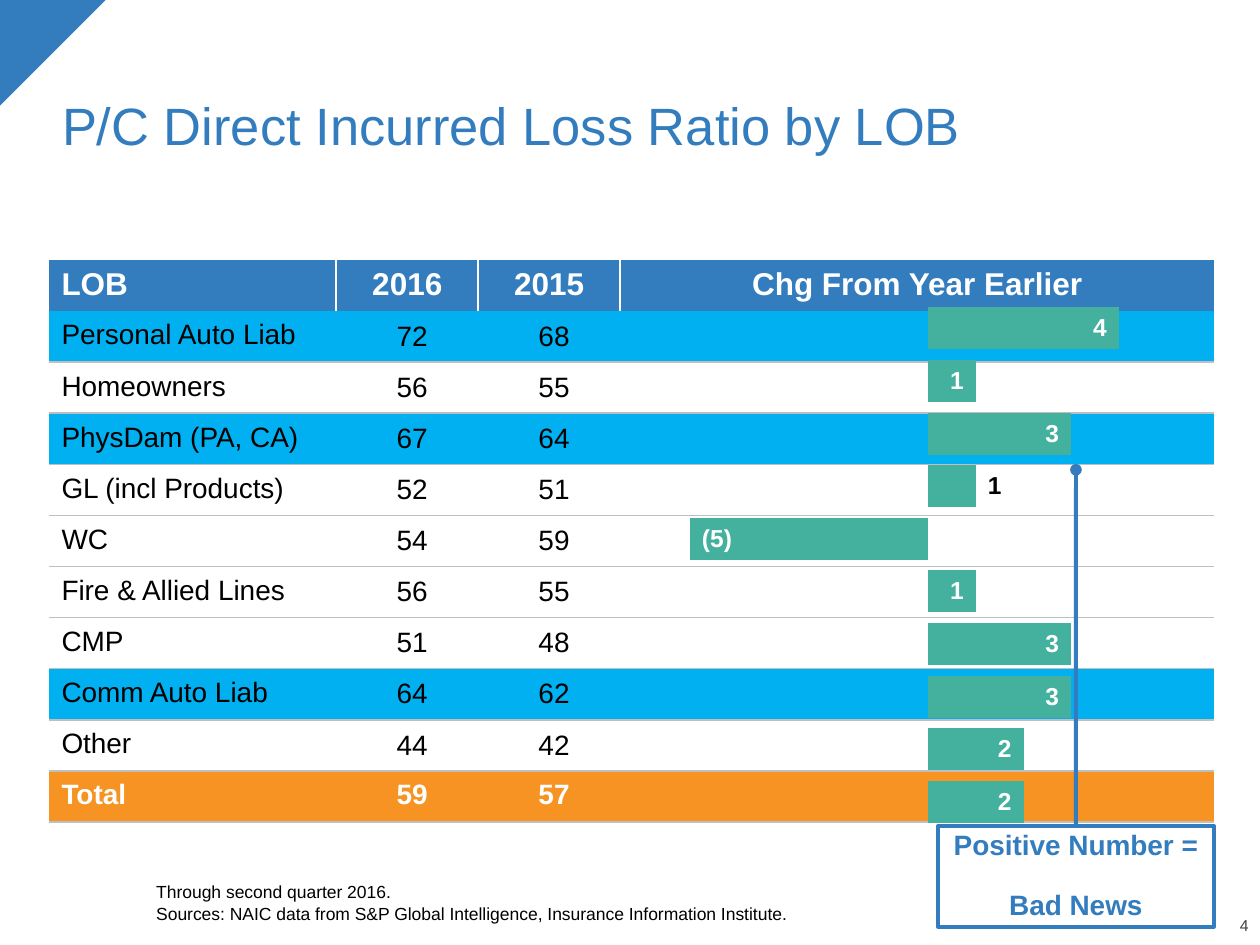
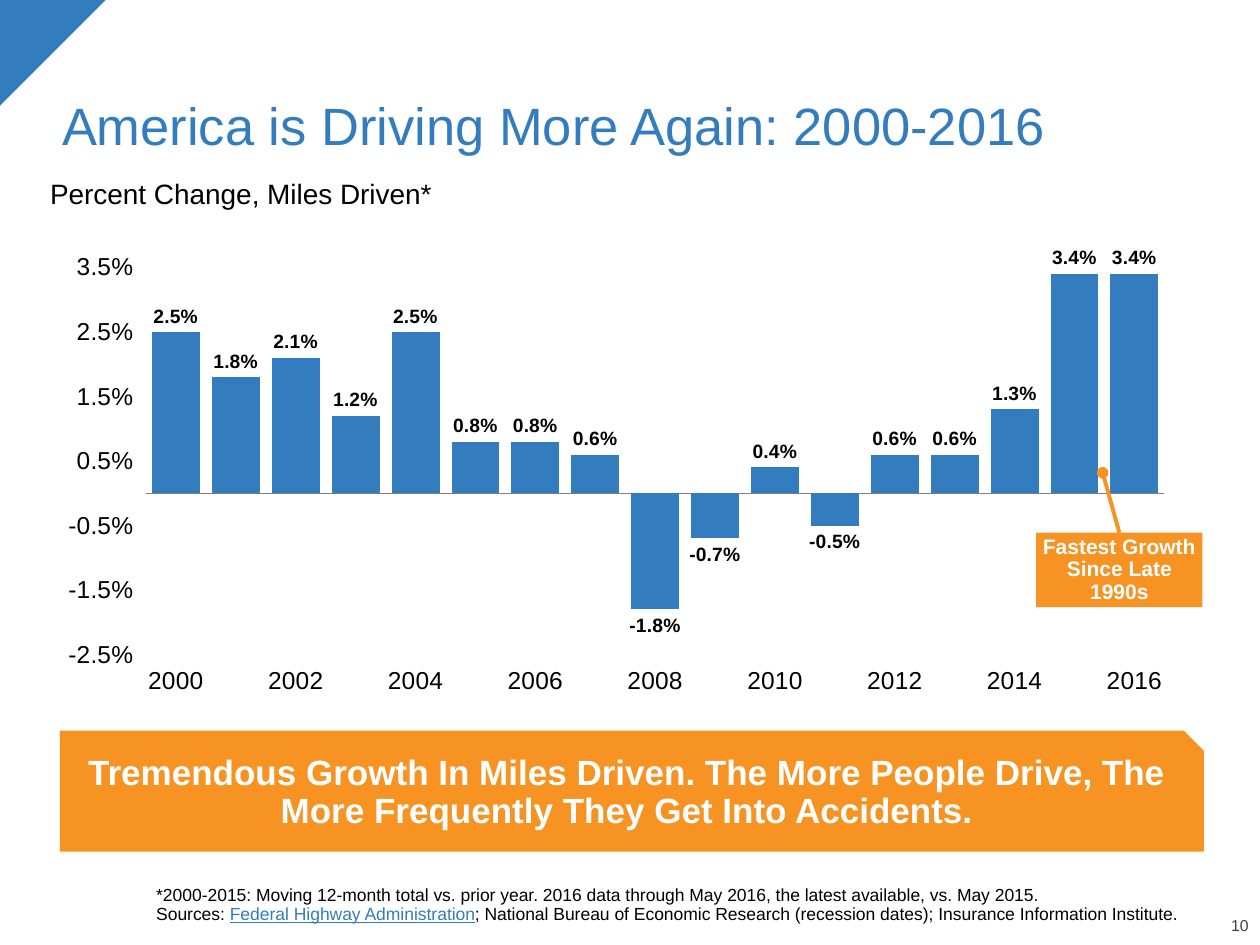
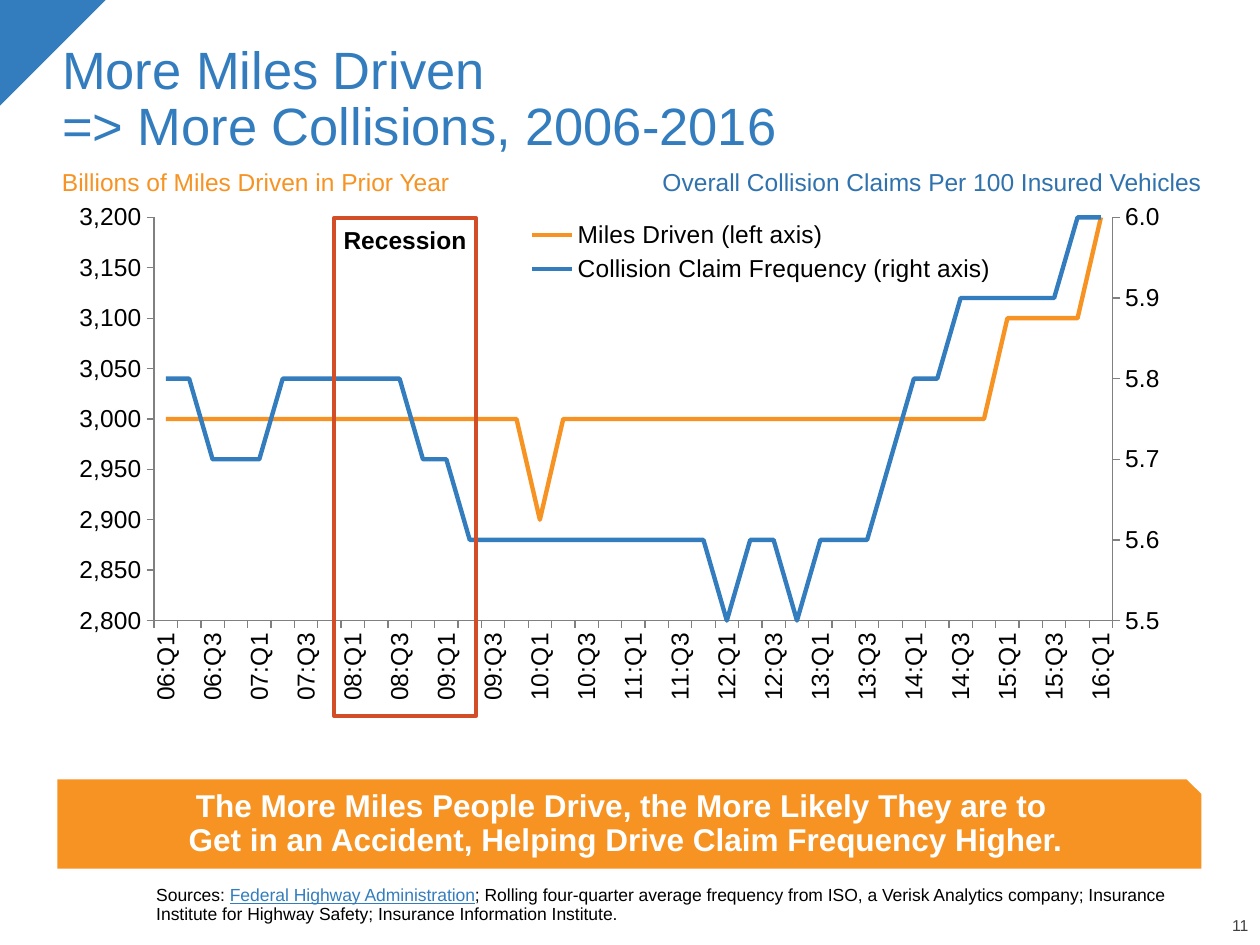
from copy import deepcopy

from pptx import Presentation
from pptx.chart.data import CategoryChartData
from pptx.dml.color import RGBColor
from pptx.enum.chart import (XL_CHART_TYPE, XL_LABEL_POSITION, XL_LEGEND_POSITION,
                             XL_TICK_LABEL_POSITION, XL_TICK_MARK)
from pptx.enum.shapes import MSO_CONNECTOR, MSO_SHAPE
from pptx.enum.text import MSO_ANCHOR, MSO_AUTO_SIZE, PP_ALIGN
from pptx.oxml import parse_xml
from pptx.oxml.ns import nsdecls, qn
from pptx.util import Cm, Pt

FONT = "Arial"
BLUE = RGBColor(0x33, 0x7D, 0xBE)
DEEP_BLUE = RGBColor(0x2F, 0x72, 0xAD)
SKY = RGBColor(0x00, 0xB0, 0xF0)
ORANGE = RGBColor(0xF6, 0x93, 0x22)
GREEN = RGBColor(0x43, 0xB1, 0x9E)
RED = RGBColor(0xD3, 0x4D, 0x27)
BLACK = RGBColor(0x00, 0x00, 0x00)
WHITE = RGBColor(0xFF, 0xFF, 0xFF)
DARK_GRAY = RGBColor(0x40, 0x40, 0x40)
AXIS_GRAY = RGBColor(0x80, 0x80, 0x80)
RULE_GRAY = RGBColor(0xBF, 0xBF, 0xBF)

LEFT, CENTER, RIGHT = PP_ALIGN.LEFT, PP_ALIGN.CENTER, PP_ALIGN.RIGHT
TOP, MIDDLE, BOTTOM = MSO_ANCHOR.TOP, MSO_ANCHOR.MIDDLE, MSO_ANCHOR.BOTTOM
RECTANGLE, SNIPPED = MSO_SHAPE.RECTANGLE, MSO_SHAPE.SNIP_1_RECTANGLE
BAR, COLUMN, LINE = (XL_CHART_TYPE.BAR_CLUSTERED, XL_CHART_TYPE.COLUMN_CLUSTERED,
                     XL_CHART_TYPE.LINE)
INSIDE_END, OUTSIDE_END = XL_LABEL_POSITION.INSIDE_END, XL_LABEL_POSITION.OUTSIDE_END
LOW = XL_TICK_LABEL_POSITION.LOW
NO_TICK, TICK_OUT = XL_TICK_MARK.NONE, XL_TICK_MARK.OUTSIDE

NO_INSETS = (0, 0, 0, 0)
PLAIN_TABLE_STYLE = "{2D5ABB26-0587-4C30-8999-92F81FD0307C}"
ACCOUNTING = r'_(* #,##0_);_(* \(#,##0\);_(* "-"??_);_('
LAYOUT = ("<c:layout %s><c:manualLayout>{target}"
          '<c:xMode val="edge"/><c:yMode val="edge"/><c:x val="{x}"/><c:y val="{y}"/>'
          '<c:w val="{w}"/><c:h val="{h}"/></c:manualLayout></c:layout>' % nsdecls("c"))


def write(target, *lines, size, color=BLACK, bold=False, align=LEFT, spacing=0.9,
          before=0, anchor=TOP, insets=(0.25, 0.13, 0.25, 0.13), wrap=True):
    """Fill a shape or cell; a line is text or a list of text and (link text,) spans."""
    frame = target.text_frame
    holder = target
    if not hasattr(target, "margin_left"):
        holder = frame
        frame.word_wrap = wrap
        frame.auto_size = MSO_AUTO_SIZE.NONE
    holder.vertical_anchor = anchor
    (holder.margin_left, holder.margin_top,
     holder.margin_right, holder.margin_bottom) = map(Cm, insets)
    for index, line in enumerate(lines):
        para = frame.add_paragraph() if index else frame.paragraphs[0]
        para.alignment = align
        para.line_spacing = spacing
        para.space_before = Pt(before if index else 0)
        for part in [line] if isinstance(line, str) else line:
            linked = isinstance(part, tuple)
            for row, words in enumerate((part[0] if linked else part).split("\n")):
                if row:
                    para.add_line_break()
                span = para.add_run()
                span.text = words
                span.font.name = FONT
                span.font.size = Pt(size)
                span.font.bold = bold
                span.font.underline = linked
                span.font.color.rgb = BLUE if linked else color


def draw_chart(page, kind, place, plot, categories, series, size):
    data = CategoryChartData()
    data.categories = categories
    for name, values in series:
        data.add_series(name, values)
    chart = page.shapes.add_chart(kind, *map(Cm, place), data).chart
    chart.has_title = False
    chart.has_legend = False
    chart.font.name = FONT
    chart.font.size = Pt(size)
    chart.font.color.rgb = BLACK
    chart.value_axis.has_major_gridlines = False
    for axis in (chart.category_axis, chart.value_axis):
        axis.format.line.color.rgb = AXIS_GRAY
        axis.format.line.width = Pt(0.75)
        axis.major_tick_mark = TICK_OUT
    area = chart._chartSpace.chart.plotArea
    for old_layout in area.findall(qn("c:layout")):
        area.remove(old_layout)
    x, y, w, h = plot
    area.insert(0, parse_xml(LAYOUT.format(
        target='<c:layoutTarget val="inner"/>', x=x, y=y, w=w, h=h)))
    return chart


deck = Presentation()
deck.slide_width, deck.slide_height = Cm(25.4), Cm(19.05)

# Shared frame: corner, title, source line and page number
AGENCY = ("Federal Highway Administration",)
pages = []
for title, number, sources in (
    ("P/C Direct Incurred Loss Ratio by LOB", "4",
     ["Through second quarter 2016.",
      "Sources: NAIC data from S&P Global Intelligence, Insurance Information Institute."]),
    ("America is Driving More Again: 2000-2016", "10",
     [["*2000-2015: Moving 12-month total vs. prior year. 2016 data through May 2016, "
       "the latest available, vs. May 2015.\nSources: ", AGENCY,
       "; National Bureau of Economic Research (recession dates); "
       "Insurance Information Institute."]]),
    ("More Miles Driven\n=> More Collisions, 2006-2016", "11",
     [["Sources: ", AGENCY,
       "; Rolling four-quarter average frequency from ISO, a Verisk Analytics company; "
       "Insurance Institute for Highway Safety; Insurance Information Institute."]]),
):
    page = deck.slides.add_slide(deck.slide_layouts[5])
    pages.append(page)
    corner = page.shapes.add_shape(MSO_SHAPE.RIGHT_TRIANGLE, 0, 0, Cm(2.13), Cm(2.13))
    corner.rotation = 90
    corner.shadow.inherit = False
    corner.fill.solid()
    corner.fill.fore_color.rgb = BLUE
    corner.line.fill.background()

    heading = page.shapes.title
    heading.left, heading.top, heading.width, heading.height = map(
        Cm, (1, 0.66, 23.5, 2.64))
    write(heading, title, size=30, color=BLUE, anchor=BOTTOM)
    footer = page.shapes.add_textbox(*map(Cm, (3.15, 17.5, 21.34, 1.14)))
    write(footer, *sources, size=10, before=2, anchor=BOTTOM, insets=NO_INSETS)
    folio = page.shapes.add_textbox(*map(Cm, (23.95, 18.52, 1.22, 0.33)))
    write(folio, number, size=9, color=DARK_GRAY, align=RIGHT, anchor=BOTTOM,
          insets=NO_INSETS)
loss_page, driving_page, collision_page = pages

# Axis captions
for page, place, caption, size, color, align in (
    (driving_page, (0.76, 3.51, 23.5, 1.09), "Percent Change, Miles Driven*",
     16, BLACK, LEFT),
    (collision_page, (1, 3.3, 9.68, 1.09), "Billions of Miles Driven in Prior Year",
     14, ORANGE, LEFT),
    (collision_page, (12.75, 3.3, 11.73, 1.09),
     "Overall Collision Claims Per 100 Insured Vehicles", 14, DEEP_BLUE, RIGHT),
):
    box = page.shapes.add_textbox(*map(Cm, place))
    write(box, caption, size=size, color=color, align=align)

# Loss ratio table
loss_rows = (
    ("LOB", "2016", "2015", "Chg From Year Earlier"),
    ("Personal Auto Liab", "72", "68", ""),
    ("Homeowners", "56", "55", ""),
    ("PhysDam (PA, CA)", "67", "64", ""),
    ("GL (incl Products)", "52", "51", ""),
    ("WC", "54", "59", ""),
    ("Fire & Allied Lines", "56", "55", ""),
    ("CMP", "51", "48", ""),
    ("Comm Auto Liab", "64", "62", ""),
    ("Other", "44", "42", ""),
    ("Total", "59", "57", ""),
)
row_fills = {0: BLUE, 1: SKY, 3: SKY, 8: SKY, 10: ORANGE}
total_row = len(loss_rows) - 1
table_frame = loss_page.shapes.add_table(
    len(loss_rows), 4, *map(Cm, (0.99, 5.24, 23.49, 11.33)))
table = table_frame.table
table.first_row = table.horz_banding = False
table._tbl.tblPr.find(qn("a:tableStyleId")).text = PLAIN_TABLE_STYLE
for column, width in zip(table.columns, (5.79, 2.86, 2.86, 11.98)):
    column.width = Cm(width)
for r, values in enumerate(loss_rows):
    table.rows[r].height = Cm(1.03)
    for c, value in enumerate(values):
        cell = table.cell(r, c)
        numeric = r > 0 and c in (1, 2)
        if r == 0:
            align = CENTER if c else LEFT
        else:
            align = RIGHT if numeric else LEFT
        write(cell, value, size=16 if r else 18, bold=r in (0, total_row), align=align,
              color=WHITE if r in (0, total_row) else BLACK, anchor=MIDDLE,
              spacing=1.0 if numeric and r < total_row else 0.9,
              insets=(0.25, 0.13, 1.02 if numeric else 0.25, 0.13))
        if r in row_fills:
            cell.fill.solid()
            cell.fill.fore_color.rgb = row_fills[r]
        else:
            cell.fill.background()
        if r:
            borders = [("lnB", RULE_GRAY, 1.5 if r == total_row else 1)]
        else:
            borders = [("lnL", WHITE, 1.5)] * (c > 0) + [("lnR", WHITE, 1.5)] * (c < 3)
        for position, (side, color, weight) in enumerate(borders):
            cell._tc.get_or_add_tcPr().insert(position, parse_xml(
                f'<a:{side} {nsdecls("a")} w="{Pt(weight)}"><a:solidFill>'
                f'<a:srgbClr val="{color}"/></a:solidFill></a:{side}>'))

# Bar charts: change in loss ratio, and miles driven
change_chart = draw_chart(
    loss_page, BAR, (12.95, 5.87, 11.53, 11.05), (0, 0.02, 1, 0.96),
    [str(n) for n in range(1, 11)],
    [("Series 1", (4, 1, 3, 1, -5, 1, 3, 3, 2, 2))], 10)
change_chart.category_axis.reverse_order = True
change_chart.category_axis.visible = False
change_chart.value_axis.visible = False
change_chart.value_axis.minimum_scale = -6
change_chart.value_axis.maximum_scale = 6

miles_chart = draw_chart(
    driving_page, COLUMN, (0.97, 4.09, 22.94, 10.87), (0.086, 0.06, 0.895, 0.778),
    ["" if year % 2 else str(year) for year in range(2000, 2017)],
    [("Series 1", (0.025, 0.018, 0.021, 0.012, 0.025, 0.008, 0.008, 0.006, -0.018,
                   -0.007, 0.004, -0.005, 0.006, 0.006, 0.013, 0.034, 0.034))], 14)
miles_chart.category_axis.tick_label_position = LOW
miles_chart.category_axis.major_tick_mark = NO_TICK
percent_axis = miles_chart.value_axis
percent_axis.tick_label_position = LOW
percent_axis.format.line.fill.background()
percent_axis.minimum_scale = -0.025
percent_axis.maximum_scale = 0.04
percent_axis.major_unit = 0.01
percent_axis.tick_labels.number_format = "0.0%"
percent_axis.tick_labels.number_format_is_linked = False

for chart, color, label_size, label_color, position, number_format in (
    (change_chart, GREEN, 14, WHITE, INSIDE_END, ACCOUNTING),
    (miles_chart, BLUE, 11, BLACK, OUTSIDE_END, "0.0%"),
):
    plot = chart.plots[0]
    plot.gap_width = 25
    plot.vary_by_categories = False
    bars = plot.series[0]
    bars.invert_if_negative = False
    bars.format.fill.solid()
    bars.format.fill.fore_color.rgb = color
    labels = bars.data_labels
    labels.show_value = True
    labels.position = position
    labels.number_format = number_format
    labels.number_format_is_linked = False
    labels.font.name = FONT
    labels.font.size = Pt(label_size)
    labels.font.bold = True
    labels.font.color.rgb = label_color

liability_label = change_chart.plots[0].series[0].points[3].data_label
liability_label.position = OUTSIDE_END
liability_label.font.name = FONT
liability_label.font.size = Pt(14)
liability_label.font.bold = True
liability_label.font.color.rgb = BLACK

# Line chart: miles on the left axis, claim frequency on the right
quarters = [f"{year:02}:Q{quarter}" for year in range(6, 17) for quarter in range(1, 5)]
miles = [3000] * 16 + [2900] + [3000] * 19 + [3100] * 4 + [3200]
frequency = (5.8, 5.8, 5.7, 5.7, 5.7, 5.8, 5.8, 5.8, 5.8, 5.8, 5.8, 5.7,
             5.7, 5.6, 5.6, 5.6, 5.6, 5.6, 5.6, 5.6, 5.6, 5.6, 5.6, 5.6,
             5.5, 5.6, 5.6, 5.5, 5.6, 5.6, 5.6, 5.7, 5.8, 5.8, 5.9, 5.9,
             5.9, 5.9, 5.9, 6, 6)
collision_chart = draw_chart(
    collision_page, LINE, (1.17, 3.86, 23.06, 11.63), (0.084, 0.045, 0.838, 0.699),
    quarters[:len(miles)],
    [("Miles Driven (left axis)", miles),
     ("Collision Claim Frequency (right axis)", frequency)], 14)
for curve, color in zip(collision_chart.plots[0].series, (ORANGE, BLUE)):
    curve.smooth = False
    curve.format.line.color.rgb = color
    curve.format.line.width = Pt(2.5)

miles_axis = collision_chart.value_axis
miles_axis.minimum_scale = 2800
miles_axis.maximum_scale = 3200
miles_axis.major_unit = 50
miles_axis.tick_labels.number_format = "#,##0"
miles_axis.tick_labels.number_format_is_linked = False
quarter_axis = collision_chart.category_axis
quarter_axis.tick_labels.font.size = Pt(14)
quarter_element = quarter_axis._element
quarter_element.txPr.find(qn("a:bodyPr")).set("rot", "-5400000")
quarter_element.find(qn("c:noMultiLvlLbl")).addprevious(
    parse_xml(f'<c:tickLblSkip {nsdecls("c")} val="2"/>'))

legend_layout = parse_xml(LAYOUT.format(target="", x=0.4, y=0.04, w=0.43, h=0.13))
collision_chart.has_legend = True
legend = collision_chart.legend
legend.position = XL_LEGEND_POSITION.BOTTOM
legend.include_in_layout = False
legend.font.name = FONT
legend.font.size = Pt(14)
for old_layout in legend._element.findall(qn("c:layout")):
    legend._element.remove(old_layout)
legend._element.find(qn("c:legendPos")).addnext(legend_layout)

left_lines = collision_chart._chartSpace.chart.plotArea.find(qn("c:lineChart"))
right_lines = deepcopy(left_lines)
left_lines.remove(left_lines.findall(qn("c:ser"))[1])
right_lines.remove(right_lines.findall(qn("c:ser"))[0])
for axis_id, value in zip(right_lines.findall(qn("c:axId")), ("5001", "5002")):
    axis_id.set("val", value)
left_lines.addnext(right_lines)
frequency_axis = deepcopy(miles_axis._element)
hidden_quarters = deepcopy(quarter_element)
for element, changes in (
    (frequency_axis, {"axId": "5002", "crossAx": "5001", "axPos": "r", "crosses": "max",
                      "min": "5.5", "max": "6", "majorUnit": "0.1"}),
    (hidden_quarters, {"axId": "5001", "crossAx": "5002", "delete": "1"}),
):
    for tag, value in changes.items():
        next(element.iter(qn(f"c:{tag}"))).set("val", value)
frequency_axis.find(qn("c:numFmt")).set("formatCode", "0.0")
miles_axis._element.addnext(frequency_axis)
frequency_axis.addnext(hidden_quarters)

# Callouts and banners; a pointer runs from the top of its box to a dot
banner = dict(color=WHITE, bold=True, align=CENTER, anchor=MIDDLE,
              insets=(0.25, 0.13, 0.25, 0.25))
for page, kind, place, fill, outline, pointer, lines, text_format in (
    (loss_page, RECTANGLE, (18.91, 16.65, 5.56, 2.03), WHITE, BLUE, (21.69, 9.47),
     ["Positive Number =", "Bad News"],
     dict(size=16, color=BLUE, bold=True, align=CENTER, anchor=MIDDLE, before=17)),
    (driving_page, RECTANGLE, (20.89, 10.74, 3.35, 1.5), ORANGE, None, (22.23, 9.53),
     ["Fastest Growth Since Late 1990s"],
     dict(banner, size=12, insets=(0.13, 0, 0.13, 0))),
    (driving_page, SNIPPED, (1.21, 14.73, 23.06, 2.44), ORANGE, None, None,
     ["Tremendous Growth In Miles Driven. The More People Drive, The More Frequently "
      "They Get Into Accidents."], dict(banner, size=20)),
    (collision_page, SNIPPED, (1.16, 15.71, 23.06, 1.8), ORANGE, None, None,
     ["The More Miles People Drive, the More Likely They are to ",
      "Get in an Accident, Helping Drive Claim Frequency Higher."],
     dict(banner, size=18)),
    (collision_page, RECTANGLE, (6.73, 4.4, 2.87, 10.03), None, RED, None,
     ["Recession"], dict(size=14, bold=True, align=CENTER, spacing=1.0, wrap=False)),
):
    box = page.shapes.add_shape(kind, *map(Cm, place))
    box.shadow.inherit = False
    if fill is None:
        box.fill.background()
    else:
        box.fill.solid()
        box.fill.fore_color.rgb = fill
    if outline is None:
        box.line.fill.background()
    else:
        box.line.color.rgb = outline
        box.line.width = Pt(2.25)
    write(box, *lines, **text_format)
    if pointer:
        line = page.shapes.add_connector(MSO_CONNECTOR.STRAIGHT, 0, 0, *map(Cm, pointer))
        line.begin_connect(box, 0)
        line.line.color.rgb = outline or fill
        line.line.width = Pt(2.25)
        line.line._get_or_add_ln().append(
            parse_xml(f'<a:tailEnd {nsdecls("a")} type="oval"/>'))
        line._element.spPr.append(parse_xml(f'<a:effectLst {nsdecls("a")}/>'))

deck.save("out.pptx")
